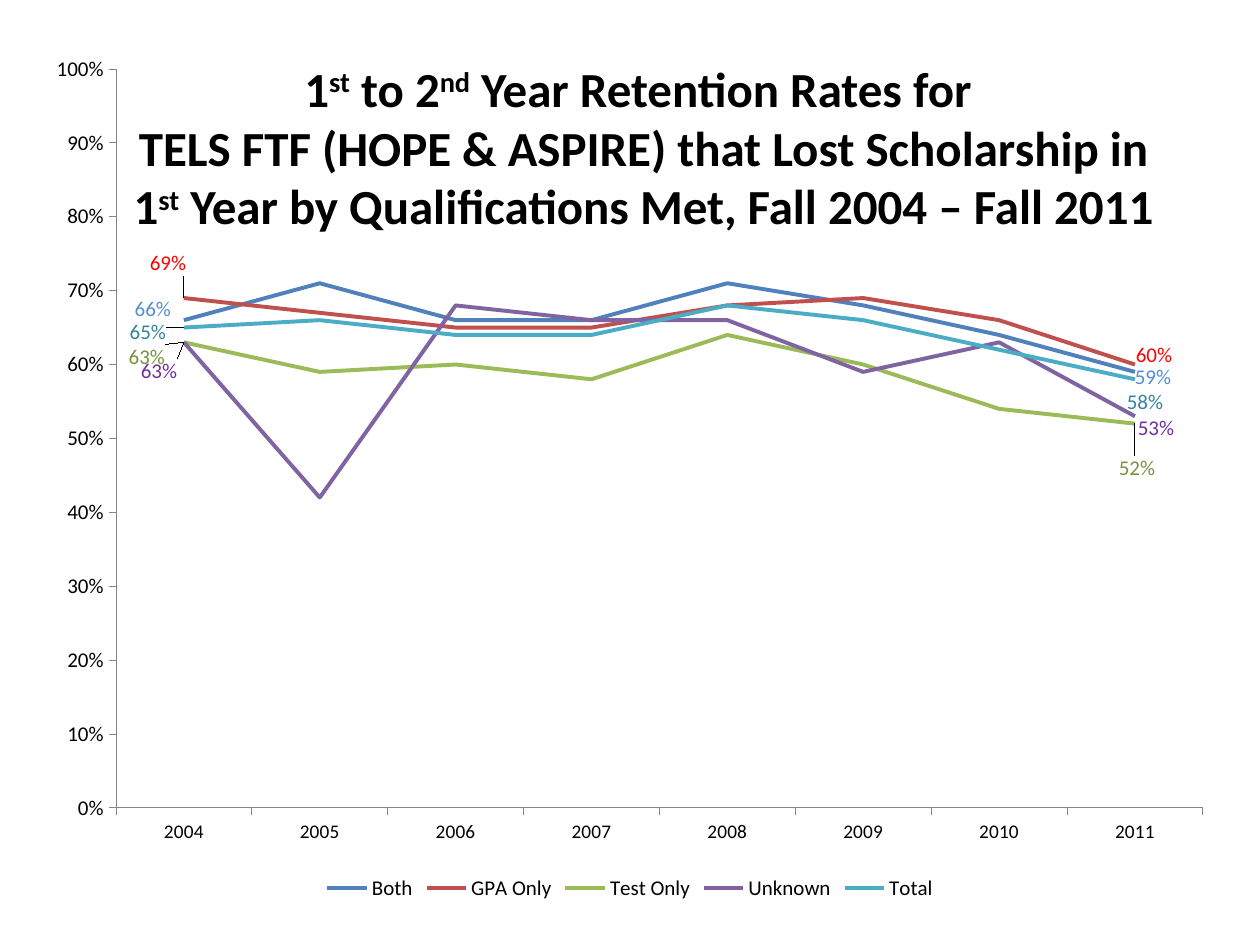
from lxml.etree import Element, SubElement
from pptx import Presentation
from pptx.chart.data import CategoryChartData
from pptx.dml.color import RGBColor
from pptx.enum.chart import XL_CHART_TYPE, XL_LABEL_POSITION, XL_LEGEND_POSITION, XL_MARKER_STYLE, XL_TICK_MARK
from pptx.enum.text import MSO_ANCHOR, MSO_AUTO_SIZE, PP_ALIGN
from pptx.oxml.ns import qn
from pptx.util import Emu, Pt

FONT = "Calibri"
TITLE = [
    [("1", False), ("st", True), (" to 2", False), ("nd", True), (" Year Retention Rates for ", False)],
    [("TELS FTF (HOPE & ASPIRE) that Lost Scholarship in 1", False), ("st", True),
     (" Year by Qualifications Met, Fall 2004 – Fall 2011", False)],
]
YEARS = ["2004", "2005", "2006", "2007", "2008", "2009", "2010", "2011"]
ABOVE, BELOW = XL_LABEL_POSITION.ABOVE, XL_LABEL_POSITION.BELOW
SERIES = [
    ("Both", [0.66, 0.71, 0.66, 0.66, 0.71, 0.68, 0.64, 0.59],
     "4F81BD", "558ED5", BELOW, {0: (-31, -28), 7: (18, -12)}),
    ("GPA Only", [0.69, 0.67, 0.65, 0.65, 0.68, 0.69, 0.66, 0.60],
     "C0504D", "FF0000", ABOVE, {0: (-16, -17), 7: (19, 8)}),
    ("Test Only", [0.63, 0.59, 0.60, 0.58, 0.64, 0.60, 0.54, 0.52],
     "9BBB59", "77933C", BELOW, {0: (-37, -3), 7: (2, 27)}),
    ("Unknown", [0.63, 0.42, 0.68, 0.66, 0.66, 0.59, 0.63, 0.53],
     "8064A2", "7030A0", BELOW, {0: (-25, 11), 7: (21, -5)}),
    ("Total", [0.65, 0.66, 0.64, 0.64, 0.68, 0.66, 0.62, 0.58],
     "4BACC6", "31859C", ABOVE, {0: (-36, 22), 7: (10, 40)}),
]
CHART_BOX = (33, 39, 1194, 867)
PLOT_BOX = (83, 30, 1087, 739)
TITLE_BOX = (108, 73, 1071, 147)


def px(length):
    return Emu(round(length * 914400 / 126))


def color(value):
    return RGBColor.from_string(value)


def style(font, size, value):
    font.name, font.size = FONT, Pt(size)
    font.color.rgb = color(value)


def manual_layout(settings):
    layout = Element(qn("c:layout"))
    manual = SubElement(layout, qn("c:manualLayout"))
    for tag, value in settings:
        SubElement(manual, qn(f"c:{tag}")).set("val", str(value))
    return layout


def add_label(series, index, shift, side, value):
    label = series.points[index].data_label
    style(label.font, 12, value)
    label.position = side
    node = series._element.xpath(f"c:dLbls/c:dLbl[c:idx/@val='{index}']")[0]
    offsets = [("x", round(shift[0] / CHART_BOX[2], 4)), ("y", round(shift[1] / CHART_BOX[3], 4))]
    number_format = Element(qn("c:numFmt"))
    number_format.set("formatCode", "0%")
    number_format.set("sourceLinked", "0")
    node.insert(1, manual_layout(offsets))
    node.insert(2, number_format)


def hide_leader_lines(series):
    labels = series.data_labels._element
    for old in labels.findall(qn("c:showLeaderLines")):
        labels.remove(old)
    extensions = SubElement(labels, qn("c:extLst"))
    extension = SubElement(extensions, qn("c:ext"))
    extension.set("uri", "{CE6537A1-D6FC-4f65-9D91-7224C49458BB}")
    namespace = "http://schemas.microsoft.com/office/drawing/2012/chart"
    leader = SubElement(extension, f"{{{namespace}}}showLeaderLines", nsmap={"c15": namespace})
    leader.set("val", "0")


def add_line_chart(page):
    data = CategoryChartData(number_format="0%")
    data.categories = YEARS
    for name, values, *_ in SERIES:
        data.add_series(name, values)
    chart = page.shapes.add_chart(XL_CHART_TYPE.LINE, *map(px, CHART_BOX), data).chart
    style(chart.font, 10, "000000")
    chart.has_title = False
    chart.has_legend = True
    chart.legend.position = XL_LEGEND_POSITION.BOTTOM
    chart.legend.include_in_layout = False
    style(chart.legend.font, 12, "000000")
    chart.plots[0].vary_by_categories = False

    for axis, size in ((chart.category_axis, 11), (chart.value_axis, 12)):
        axis.has_major_gridlines = False
        axis.major_tick_mark = XL_TICK_MARK.OUTSIDE
        axis.minor_tick_mark = XL_TICK_MARK.NONE
        axis.format.line.color.rgb = color("868686")
        axis.format.line.width = Pt(0.5)
        style(axis.tick_labels.font, size, "000000")
    scale = chart.value_axis
    scale.minimum_scale, scale.maximum_scale, scale.major_unit = 0, 1, 0.1
    scale.tick_labels.number_format = "0%"
    scale.tick_labels.number_format_is_linked = False

    for series, (_, _, line, text, side, shifts) in zip(chart.plots[0].series, SERIES):
        series.smooth = False
        series.marker.style = XL_MARKER_STYLE.NONE
        series.format.line.color.rgb = color(line)
        series.format.line.width = Pt(2.25)
        for index, shift in shifts.items():
            add_label(series, index, shift, side, text)
        series.data_labels.show_value = False
        hide_leader_lines(series)

    plot_area = chart._chartSpace.chart.plotArea
    for old in plot_area.findall(qn("c:layout")):
        plot_area.remove(old)
    settings = [("layoutTarget", "inner"), ("xMode", "edge"), ("yMode", "edge")]
    for position, tag in enumerate("xywh"):
        settings.append((tag, round(PLOT_BOX[position] / CHART_BOX[2 + position % 2], 4)))
    plot_area.insert(0, manual_layout(settings))


def write_title(page):
    box = page.shapes.title
    box.left, box.top, box.width, box.height = map(px, TITLE_BOX)
    frame = box.text_frame
    frame.word_wrap = True
    frame.auto_size = MSO_AUTO_SIZE.NONE
    frame.vertical_anchor = MSO_ANCHOR.MIDDLE
    for index, spans in enumerate(TITLE):
        para = frame.add_paragraph() if index else frame.paragraphs[0]
        para.alignment = PP_ALIGN.CENTER
        for text, raised in spans:
            span = para.add_run()
            span.text = text
            style(span.font, 28, "000000")
            span.font.bold = True
            if raised:
                span._r.get_or_add_rPr().set("baseline", "30000")
    page.shapes._spTree.append(box._element)


def main():
    deck = Presentation()
    deck.slide_width, deck.slide_height = px(1260), px(945)
    page = deck.slides.add_slide(deck.slide_layouts[5])
    add_line_chart(page)
    write_title(page)
    deck.save("out.pptx")


if __name__ == "__main__":
    main()
